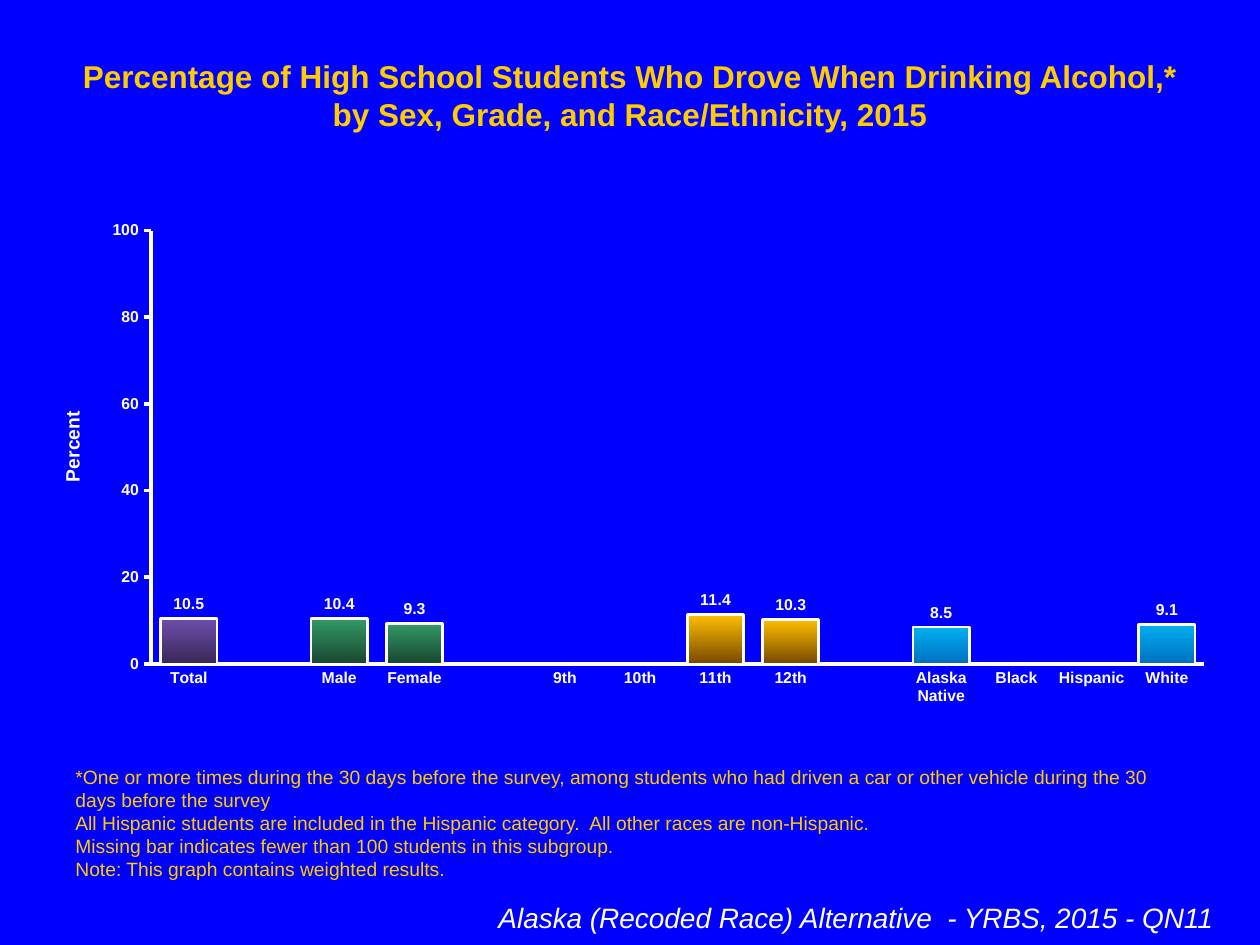
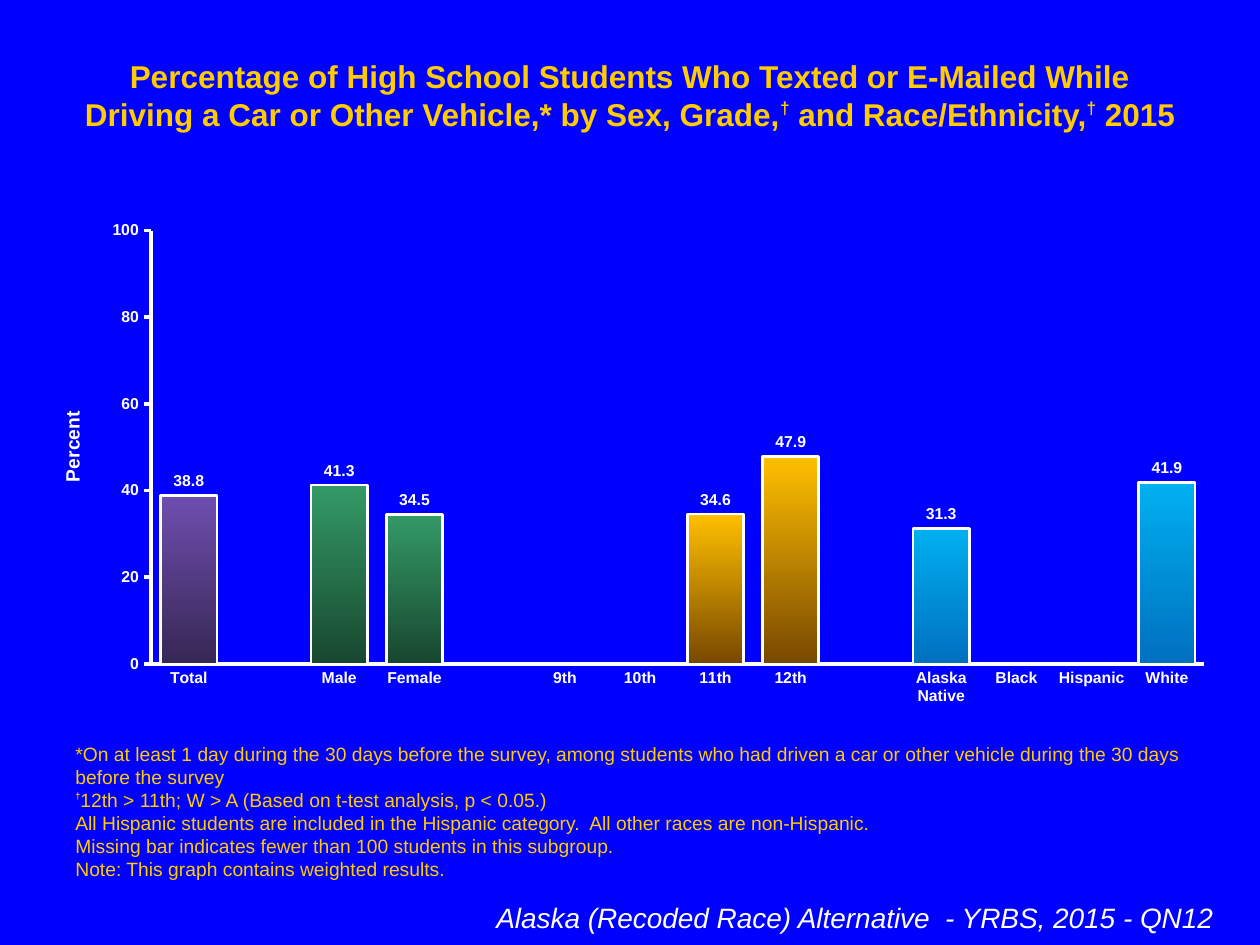
from lxml.etree import SubElement
from pptx import Presentation
from pptx.chart.data import CategoryChartData
from pptx.dml.color import RGBColor
from pptx.enum.chart import XL_CHART_TYPE, XL_LABEL_POSITION, XL_TICK_MARK
from pptx.enum.text import MSO_ANCHOR, MSO_AUTO_SIZE, PP_ALIGN
from pptx.oxml.ns import qn
from pptx.util import Inches, Pt

COLORS = {
    "background": "0000FF",
    "gold": "FFCC00",
    "white": "FFFFFF",
}
GRADIENTS = {
    "total": ("6E4EAE", "372755"),
    "sex": ("339966", "18472F"),
    "grade": ("FFC000", "784800"),
    "race": ("00B0F0", "0070C0"),
}
GROUPS = {
    "total": ["Total"],
    "sex": ["Male", "Female"],
    "grade": ["9th", "10th", "11th", "12th"],
    "race": ["Alaska Native", "Black", "Hispanic", "White"],
}
FONT = "Arial"
WIDTH, HEIGHT = Inches(10), Inches(7.5)
COLUMNS, ROWS = 100, 75
PLACES = {
    "title": (5, 4, 90, 4),
    "notes": (5, 67.5, 90, 2.9),
    "source": (9.2, 71, 88.1, 3.7),
    "chart": (2.5, 16.7, 95, 40),
}
STYLES = {
    "title": {"size": 18, "color": "gold", "bold": True},
    "notes": {"size": 11, "color": "gold", "bold": False},
    "source": {"size": 16, "color": "white", "italic": True},
    "labels": {"size": 9, "color": "white", "bold": True},
    "percent": {"size": 11, "color": "white", "bold": True},
}
DAGGERS = {
    "title": ({"size": 17, "color": "gold", "bold": True}, 40),
    "notes": ({"size": 9, "color": "gold", "bold": True}, 50),
}
COMMON_NOTES = [
    "All Hispanic students are included in the Hispanic category.  All other races are non-Hispanic.",
    "Missing bar indicates fewer than 100 students in this subgroup.",
    "Note: This graph contains weighted results.",
]
QUESTIONS = [
    {
        "code": "QN11",
        "title": "Percentage of High School Students Who Drove When Drinking Alcohol,* "
                 "by Sex, Grade, and Race/Ethnicity, 2015",
        "notes": [
            "*One or more times during the 30 days before the survey, among students "
            "who had driven a car or other vehicle during the 30 days before the survey",
        ],
        "percents": {
            "Total": 10.5, "Male": 10.4, "Female": 9.3, "11th": 11.4,
            "12th": 10.3, "Alaska Native": 8.5, "White": 9.1,
        },
    },
    {
        "code": "QN12",
        "title": "Percentage of High School Students Who Texted or E-Mailed While "
                 "Driving a Car or Other Vehicle,* by Sex, Grade,† and Race/Ethnicity,† 2015",
        "notes": [
            "*On at least 1 day during the 30 days before the survey, among students "
            "who had driven a car or other vehicle during the 30 days before the survey",
            "†12th > 11th; W > A (Based on t-test analysis, p < 0.05.)",
        ],
        "percents": {
            "Total": 38.8, "Male": 41.3, "Female": 34.5, "11th": 34.6,
            "12th": 47.9, "Alaska Native": 31.3, "White": 41.9,
        },
    },
]


def rgb(name):
    return RGBColor.from_string(COLORS[name])


def place(part):
    left, top, width, height = PLACES[part]
    return (int(WIDTH * left / COLUMNS), int(HEIGHT * top / ROWS),
            int(WIDTH * width / COLUMNS), int(HEIGHT * height / ROWS))


def style_font(font, style):
    font.name = FONT
    for attribute, value in style.items():
        if attribute == "color":
            font.color.rgb = rgb(value)
        else:
            setattr(font, attribute, Pt(value) if attribute == "size" else value)


def add_run(paragraph, text, style):
    run = paragraph.add_run()
    run.text = text
    style_font(run.font, style)
    return run


def write_paragraph(paragraph, text, part):
    for index, piece in enumerate(text.split("†")):
        if index:
            style, rise = DAGGERS[part]
            dagger = add_run(paragraph, "†", style)
            dagger._r.get_or_add_rPr().set("baseline", str(rise * 1000))
        if piece:
            add_run(paragraph, piece, STYLES[part])


def write_text(frame, lines, part, align, anchor=MSO_ANCHOR.TOP):
    settings = {
        "word_wrap": True,
        "auto_size": MSO_AUTO_SIZE.SHAPE_TO_FIT_TEXT,
        "vertical_anchor": anchor,
    }
    for attribute, value in settings.items():
        setattr(frame, attribute, value)
    for index, line in enumerate(lines):
        paragraph = frame.add_paragraph() if index else frame.paragraphs[0]
        paragraph.alignment = align
        write_paragraph(paragraph, line, part)


def add_title(slide, text):
    title = slide.shapes.title
    for attribute, value in zip(("left", "top", "width", "height"), place("title")):
        setattr(title, attribute, value)
    write_text(title.text_frame, [text], "title", PP_ALIGN.CENTER)


def add_text(slide, lines, part, align, anchor=MSO_ANCHOR.TOP):
    box = slide.shapes.add_textbox(*place(part))
    write_text(box.text_frame, lines, part, align, anchor)


def set_layout(parent, shares, inner=False):
    layout = parent.find(qn("c:layout"))
    if layout is None:
        layout = SubElement(parent, qn("c:layout"))
        parent.insert(0, layout)
    for child in list(layout):
        layout.remove(child)
    manual = SubElement(layout, qn("c:manualLayout"))
    settings = {"layoutTarget": "inner"} if inner else {}
    settings.update(xMode="edge", yMode="edge", **shares)
    for tag, value in settings.items():
        SubElement(manual, qn(f"c:{tag}")).set("val", str(value))


def chart_columns():
    columns = []
    for group, names in GROUPS.items():
        if columns:
            columns.append((None, ""))
        columns += [(group, name) for name in names]
    return columns


def style_axes(chart):
    percent_axis, group_axis = chart.value_axis, chart.category_axis
    for axis in (percent_axis, group_axis):
        axis.has_major_gridlines = False
        axis.minor_tick_mark = XL_TICK_MARK.NONE
        axis.format.line.color.rgb = rgb("white")
        axis.format.line.width = Pt(2)
        style_font(axis.tick_labels.font, STYLES["labels"])
    group_axis.major_tick_mark = XL_TICK_MARK.NONE
    scale = {
        "minimum_scale": 0,
        "maximum_scale": 100,
        "major_unit": 20,
        "major_tick_mark": XL_TICK_MARK.OUTSIDE,
    }
    for attribute, value in scale.items():
        setattr(percent_axis, attribute, value)
    heading = percent_axis.axis_title
    add_run(heading.text_frame.paragraphs[0], "Percent", STYLES["percent"])
    set_layout(heading._element, {"x": 0.02, "y": 0.39})


def color_bars(series, columns):
    for index, (group, _) in enumerate(columns):
        if group is None:
            continue
        bar = series.points[index].format
        bar.fill.gradient()
        bar.fill.gradient_angle = 270
        for stop, color in zip(bar.fill.gradient_stops, GRADIENTS[group]):
            stop.color.rgb = RGBColor.from_string(color)
        bar.line.color.rgb = rgb("white")
        bar.line.width = Pt(1.5)


def add_percent_chart(slide, percents):
    columns = chart_columns()
    data = CategoryChartData()
    data.categories = [name for _, name in columns]
    data.add_series("Series 1", [percents.get(name) for _, name in columns])
    chart = slide.shapes.add_chart(
        XL_CHART_TYPE.COLUMN_CLUSTERED, *place("chart"), data).chart
    chart.has_title = False
    chart.has_legend = False
    style_font(chart.font, {"size": 18, "color": "white"})
    style_axes(chart)

    plot = chart.plots[0]
    for attribute, value in {"gap_width": 34, "overlap": 100,
                             "vary_by_categories": False,
                             "has_data_labels": True}.items():
        setattr(plot, attribute, value)
    labels = plot.data_labels
    for attribute, value in {"show_value": True, "number_format": "#,##0.0",
                             "number_format_is_linked": False,
                             "position": XL_LABEL_POSITION.OUTSIDE_END}.items():
        setattr(labels, attribute, value)
    style_font(labels.font, STYLES["labels"])
    color_bars(plot.series[0], columns)
    plot_area = chart._chartSpace.chart.plotArea
    set_layout(plot_area, {"x": 0.1, "y": 0.04, "w": 0.88, "h": 0.86}, inner=True)


def add_question_slide(deck, question):
    slide = deck.slides.add_slide(deck.slide_layouts[5])
    add_title(slide, question["title"])
    add_text(slide, question["notes"] + COMMON_NOTES, "notes",
             PP_ALIGN.LEFT, MSO_ANCHOR.BOTTOM)
    add_text(slide, [f"Alaska (Recoded Race) Alternative  - YRBS, 2015 - {question['code']}"],
             "source", PP_ALIGN.RIGHT)
    add_percent_chart(slide, question["percents"])


def main():
    deck = Presentation()
    deck.slide_width, deck.slide_height = WIDTH, HEIGHT
    backdrop = deck.slide_master.background.fill
    backdrop.solid()
    backdrop.fore_color.rgb = rgb("background")
    for question in QUESTIONS:
        add_question_slide(deck, question)
    deck.save("out.pptx")


if __name__ == "__main__":
    main()
